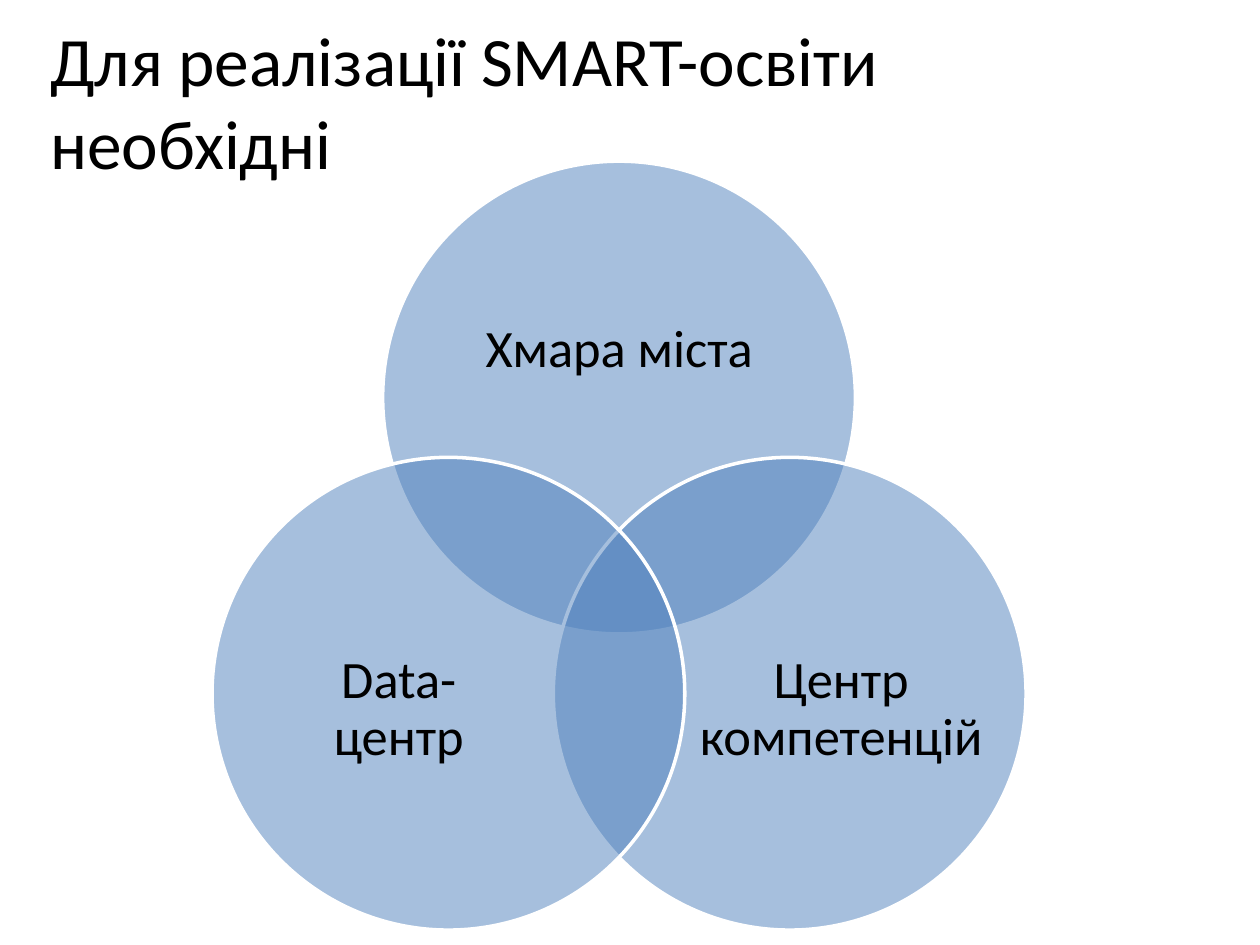
from lxml.etree import SubElement
from pptx import Presentation
from pptx.dml.color import RGBColor
from pptx.enum.shapes import MSO_SHAPE as Shape
from pptx.enum.text import MSO_ANCHOR as Anchor, PP_ALIGN as Align
from pptx.oxml.ns import qn
from pptx.util import Cm, Pt

BLACK = RGBColor(0x00, 0x00, 0x00)
WHITE = RGBColor(0xFF, 0xFF, 0xFF)
BLUE = RGBColor(0x4F, 0x81, 0xBD)

DIAMETER = 9.53
CENTRE_X = 12.48
SPREAD = 3.44
UPPER_TOP, LOWER_TOP = 3.25, 9.22


def add_text(slide, text, place, size, inset, paragraph_format):
    """Add a vertically centred text box; a vertical tab in text breaks the line."""
    box = slide.shapes.add_textbox(*(Cm(length) for length in place))
    frame = box.text_frame
    frame.word_wrap = True
    frame.vertical_anchor = Anchor.MIDDLE
    for side, margin in zip(("left", "top", "right", "bottom"), inset):
        setattr(frame, f"margin_{side}", Cm(margin))
    frame.text = text
    para = frame.paragraphs[0]
    for name, value in paragraph_format.items():
        setattr(para, name, value)
    for span in para.runs:
        span.font.name = "Calibri"
        span.font.size = Pt(size)
        span.font.color.rgb = BLACK


deck = Presentation()
deck.slide_width, deck.slide_height = Cm(25.4), Cm(19.05)
slide = deck.slides.add_slide(deck.slide_layouts[6])

add_text(slide, "Для реалізації SMART-освіти \vнеобхідні",
         (0.76, 0.43, 23.83, 3.18), 39.6, (0.25, 0.13, 0.25, 0.13),
         {"alignment": Align.LEFT})

label_format = {"alignment": Align.CENTER, "line_spacing": 0.9, "space_after": Pt(10.5)}

# Each circle: label, centre offset, top, label place
circles = [
    ("Хмара міста", 0, UPPER_TOP, (8.99, 4.93, 6.99, 4.29)),
    ("Центр компетенцій", SPREAD, LOWER_TOP, (14.1, 11.68, 5.72, 5.26)),
    ("Data-\vцентр", -SPREAD, LOWER_TOP, (5.18, 11.68, 5.72, 5.26)),
]
for label, offset, top, label_place in circles:
    left = CENTRE_X + offset - DIAMETER / 2
    circle = slide.shapes.add_shape(Shape.OVAL, Cm(left), Cm(top), Cm(DIAMETER), Cm(DIAMETER))
    circle.shadow.inherit = False
    circle.fill.solid()
    circle.fill.fore_color.rgb = BLUE
    fill_color = circle.fill._xPr.find(qn("a:solidFill")).find(qn("a:srgbClr"))
    SubElement(fill_color, qn("a:alpha"), val="50000")
    circle.line.color.rgb = WHITE
    circle.line.width = Pt(2)
    add_text(slide, label, label_place, 30, (0, 0, 0, 0), label_format)

deck.save("out.pptx")
